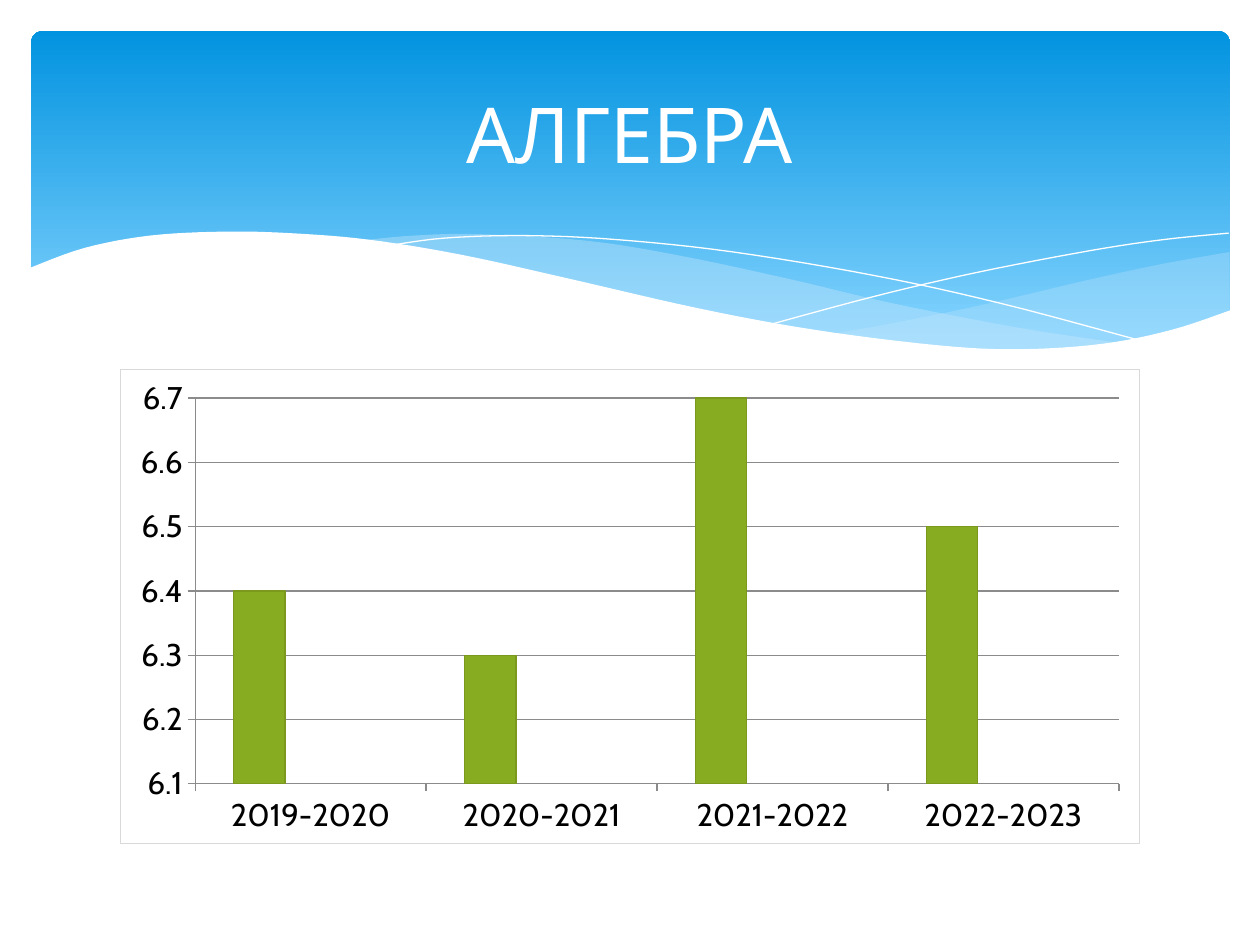
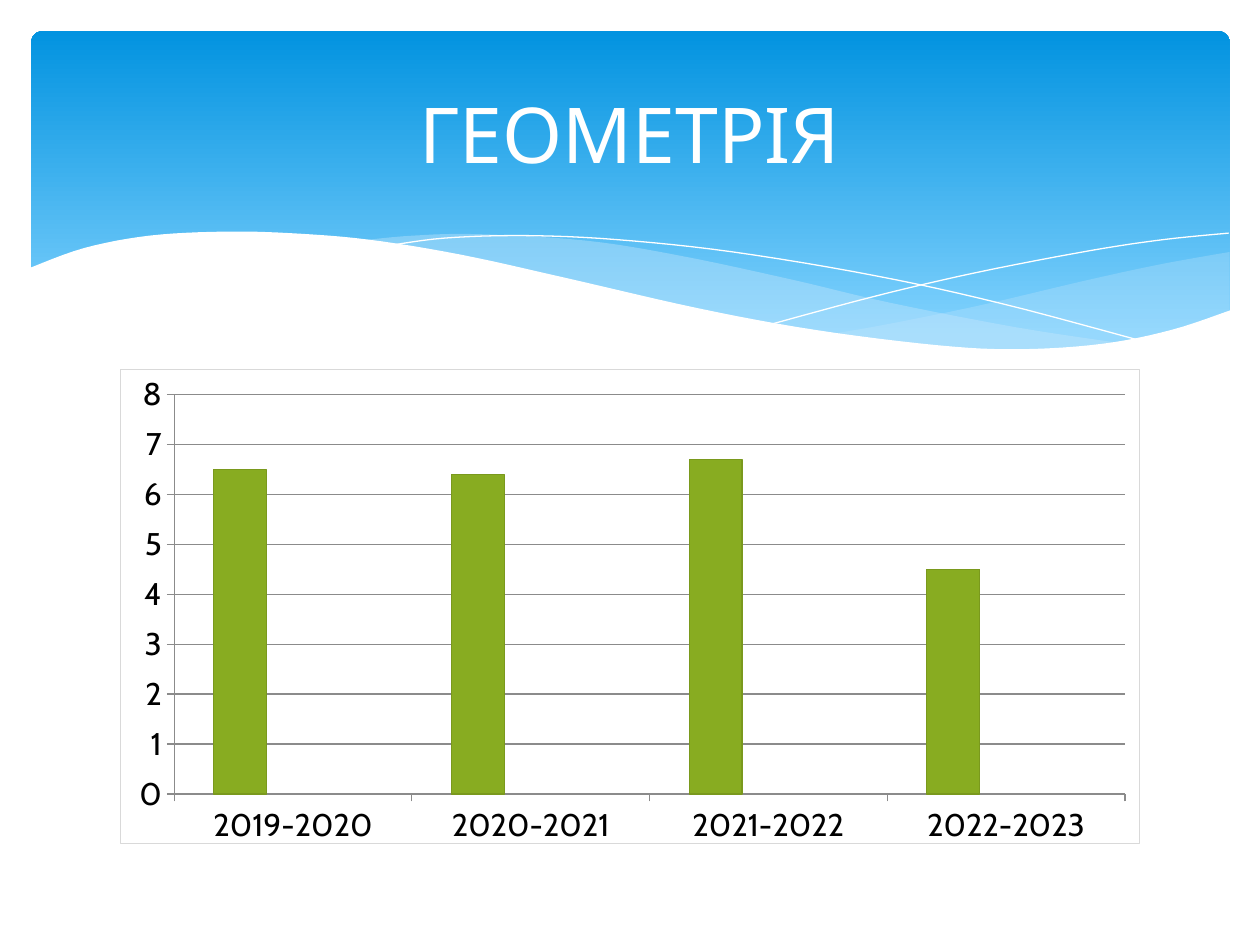
from dataclasses import dataclass
from typing import Any, NamedTuple, Optional

from lxml import etree
from pptx import Presentation
from pptx import util as u
from pptx.chart import data
from pptx.dml import color
from pptx.enum import chart as charts, shapes, text
from pptx.oxml import ns

Point = tuple[float, float]


# Theme and descriptions of the repeated elements
@dataclass(frozen=True)
class Theme:
    white: str = "FFFFFF"
    black: str = "000000"
    band_low: str = "83D3FE"
    band_high: str = "0293E0"
    wave: str = "C6E7FC"
    axis: str = "8B8B8B"
    border: str = "D9D9D9"
    bar_edge: str = "7A991D"
    bars: tuple[str, ...] = ("88AC21", "A5D028", "CAE1A3")
    font: str = "Cabin"
    chart_font: str = "Arial"
    title_size: int = 44
    axis_size: int = 18
    chart_size: int = 10
    line_width: float = 0.75


THEME = Theme()


class Area(NamedTuple):
    left: float
    top: float
    width: float
    height: float

    def lengths(self) -> list[u.Cm]:
        return [u.Cm(value) for value in self]


class Wave(NamedTuple):
    """Smooth edges joined into one outline; without a fill it is a thin line."""
    edges: tuple[tuple[Point, ...], ...]
    fill: Optional[str] = None
    opacity: int = 100


class Scale(NamedTuple):
    minimum_scale: float
    maximum_scale: float
    major_unit: float


class Subject(NamedTuple):
    title: str
    grades: tuple[float, ...]
    scale: Scale
    plot_area: Optional[Area] = None


BAND = Area(0.63, 0.63, 24.16, 6.86)
TITLE = Area(1.27, 0.94, 22.86, 3.48)
CHART = Area(2.41, 7.44, 20.57, 9.58)
YEARS = ("2019-2020", "2020-2021", "2021-2022", "2022-2023")
SUBJECTS = (
    Subject("АЛГЕБРА", (6.4, 6.3, 6.7, 6.5), Scale(6.1, 6.7, 0.1)),
    Subject("ГЕОМЕТРІЯ", (6.5, 6.4, 6.7, 4.5), Scale(0, 8, 1),
            Area(0.053, 0.053, 0.933, 0.843)),
)

WAVES = (
    # Pale wave on the right
    Wave((((24.79, 5.08), (23.39, 5.33), (21.87, 5.66), (19.79, 6.15),
           (17.93, 6.53), (16.79, 6.73)),
          ((16.79, 6.73), (18.26, 6.91), (19.84, 7.04), (21.21, 7.04),
           (22.58, 6.91), (23.75, 6.63), (24.79, 6.27))), THEME.wave, 29),
    # Pale wave in the middle
    Wave((((22.68, 6.93), (20.5, 6.6), (17.93, 6.1), (15.98, 5.64),
           (13.74, 5.16), (11.81, 4.85), (9.65, 4.72), (8.33, 4.75),
           (7.26, 4.85)),
          ((7.26, 4.85), (9.19, 5.16), (11.4, 5.64), (14.38, 6.3),
           (16.51, 6.71), (18.34, 6.96), (20.22, 7.06), (21.54, 7.04),
           (22.68, 6.93))), THEME.wave, 40),
    # Falling and rising lines
    Wave((((7.85, 4.95), (8.97, 4.8), (10.57, 4.75), (12.42, 4.83),
           (14.78, 5.08), (17.65, 5.56), (20.19, 6.12), (23.04, 6.88)),)),
    Wave((((15.57, 6.53), (17.65, 5.97), (19.71, 5.49), (22, 5.05),
           (23.47, 4.83), (24.77, 4.7)),)),
    # White front wave that cuts off the band
    Wave((((24.82, 6.25), (23.62, 6.65), (22.23, 6.93), (20.55, 7.04),
           (18.9, 6.96), (16.43, 6.65), (14.1, 6.22), (11.35, 5.59),
           (9.27, 5.13), (7.42, 4.83), (5.84, 4.7), (4.5, 4.67),
           (3.02, 4.75), (1.7, 5), (0.58, 5.41)),
          ((0.58, 8.36), (24.82, 8.36))), THEME.white),
)


# Helpers
def rgb(value: str) -> color.RGBColor:
    return color.RGBColor.from_string(value)


def apply(target: Any, values: dict[str, Any]) -> None:
    for name, value in values.items():
        setattr(target, name, value)


def style_font(font: Any, name: str, size: int, tint: str) -> None:
    apply(font, {"name": name, "size": u.Pt(size), "bold": False})
    font.color.rgb = rgb(tint)


def style_line(line: Any, tint: str, width: float = THEME.line_width) -> None:
    line.color.rgb = rgb(tint)
    line.width = u.Pt(width)


def smooth(points: tuple[Point, ...], steps: int = 6) -> list[Point]:
    """Catmull-Rom curve through the points; two points stay straight."""
    if len(points) < 3:
        return list(points)
    padded = (points[0], *points, points[-1])
    curve = [points[0]]
    for a, b, c, d in zip(padded, padded[1:], padded[2:], padded[3:]):
        for step in range(1, steps + 1):
            t = step / steps
            x, y = (
                (2 * q + (r - p) * t + (2 * p - 5 * q + 4 * r - s) * t ** 2
                 + (3 * q - p - 3 * r + s) * t ** 3) / 2
                for p, q, r, s in zip(a, b, c, d))
            curve.append((x, y))
    return curve


# Shared header
def draw_band(page: Any) -> None:
    band = page.shapes.add_shape(shapes.MSO_SHAPE.ROUNDED_RECTANGLE, *BAND.lengths())
    band.adjustments[0] = 0.034
    band.shadow.inherit = False
    band.line.fill.background()
    band.fill.gradient()
    band.fill.gradient_angle = 90
    stops = ((0.1, THEME.band_low), (1, THEME.band_high))
    for stop, (position, tint) in zip(band.fill.gradient_stops, stops):
        stop.position = position
        stop.color.rgb = rgb(tint)


def draw_wave(page: Any, wave: Wave) -> None:
    outline = [(u.Cm(x), u.Cm(y)) for edge in wave.edges for x, y in smooth(edge)]
    builder = page.shapes.build_freeform(*outline[0])
    builder.add_line_segments(outline[1:], close=wave.fill is not None)
    shape = builder.convert_to_shape()
    shape.shadow.inherit = False
    if wave.fill is None:
        shape.fill.background()
        style_line(shape.line, THEME.white, 0)
        return
    shape.fill.solid()
    shape.fill.fore_color.rgb = rgb(wave.fill)
    shape.line.fill.background()
    if wave.opacity < 100:
        tint = next(shape.element.iter(ns.qn("a:srgbClr")))
        etree.SubElement(tint, ns.qn("a:alpha"), val=str(wave.opacity * 1000))


def draw_title(page: Any, title: str) -> None:
    box = page.shapes.add_textbox(*TITLE.lengths())
    apply(box.text_frame, {"word_wrap": True,
                           "vertical_anchor": text.MSO_ANCHOR.MIDDLE})
    para = box.text_frame.paragraphs[0]
    para.alignment = text.PP_ALIGN.CENTER
    span = para.add_run()
    span.text = title
    style_font(span.font, THEME.font, THEME.title_size, THEME.white)


# Chart
def add_border(chart: Any) -> None:
    frame = etree.Element(ns.qn("c:spPr"))
    width = str(int(u.Pt(THEME.line_width)))
    line = etree.SubElement(frame, ns.qn("a:ln"), w=width)
    fill = etree.SubElement(line, ns.qn("a:solidFill"))
    etree.SubElement(fill, ns.qn("a:srgbClr"), val=THEME.border)
    chart.element.find(ns.qn("c:chart")).addnext(frame)


def place_plot(chart: Any, area: Area) -> None:
    plot_area = next(chart.element.iter(ns.qn("c:plotArea")))
    for old in plot_area.findall(ns.qn("c:layout")):
        plot_area.remove(old)
    layout = etree.Element(ns.qn("c:layout"))
    plot_area.insert(0, layout)
    manual = etree.SubElement(layout, ns.qn("c:manualLayout"))
    settings = {"layoutTarget": "inner", "xMode": "edge", "yMode": "edge",
                **dict(zip("xywh", area))}
    for name, value in settings.items():
        etree.SubElement(manual, ns.qn(f"c:{name}"), val=str(value))


def draw_chart(page: Any, subject: Subject) -> None:
    table = data.CategoryChartData()
    table.categories = YEARS
    empty = (None,) * len(YEARS)
    for number, values in enumerate((subject.grades, empty, empty), 1):
        table.add_series(f"Series {number}", values)
    chart = page.shapes.add_chart(
        charts.XL_CHART_TYPE.COLUMN_CLUSTERED, *CHART.lengths(), table).chart
    apply(chart, {"has_legend": False, "has_title": False})
    style_font(chart.font, THEME.chart_font, THEME.chart_size, THEME.black)

    plot = chart.plots[0]
    apply(plot, {"gap_width": 150, "overlap": 0, "vary_by_categories": False})
    for series, tint in zip(plot.series, THEME.bars):
        series.format.fill.solid()
        series.format.fill.fore_color.rgb = rgb(tint)
        style_line(series.format.line, THEME.bar_edge)

    for axis in (chart.category_axis, chart.value_axis):
        apply(axis, {"major_tick_mark": charts.XL_TICK_MARK.OUTSIDE,
                     "minor_tick_mark": charts.XL_TICK_MARK.NONE})
        style_font(axis.tick_labels.font, THEME.font, THEME.axis_size, THEME.black)
        style_line(axis.format.line, THEME.axis)
    apply(chart.value_axis, {"has_major_gridlines": True, **subject.scale._asdict()})
    style_line(chart.value_axis.major_gridlines.format.line, THEME.axis)

    add_border(chart)
    if subject.plot_area:
        place_plot(chart, subject.plot_area)


def main() -> None:
    deck = Presentation()
    apply(deck, {"slide_width": u.Cm(25.4), "slide_height": u.Cm(19.05)})
    for subject in SUBJECTS:
        page = deck.slides.add_slide(deck.slide_layouts[6])
        draw_band(page)
        for wave in WAVES:
            draw_wave(page, wave)
        draw_chart(page, subject)
        draw_title(page, subject.title)
    deck.save("out.pptx")


if __name__ == "__main__":
    main()
